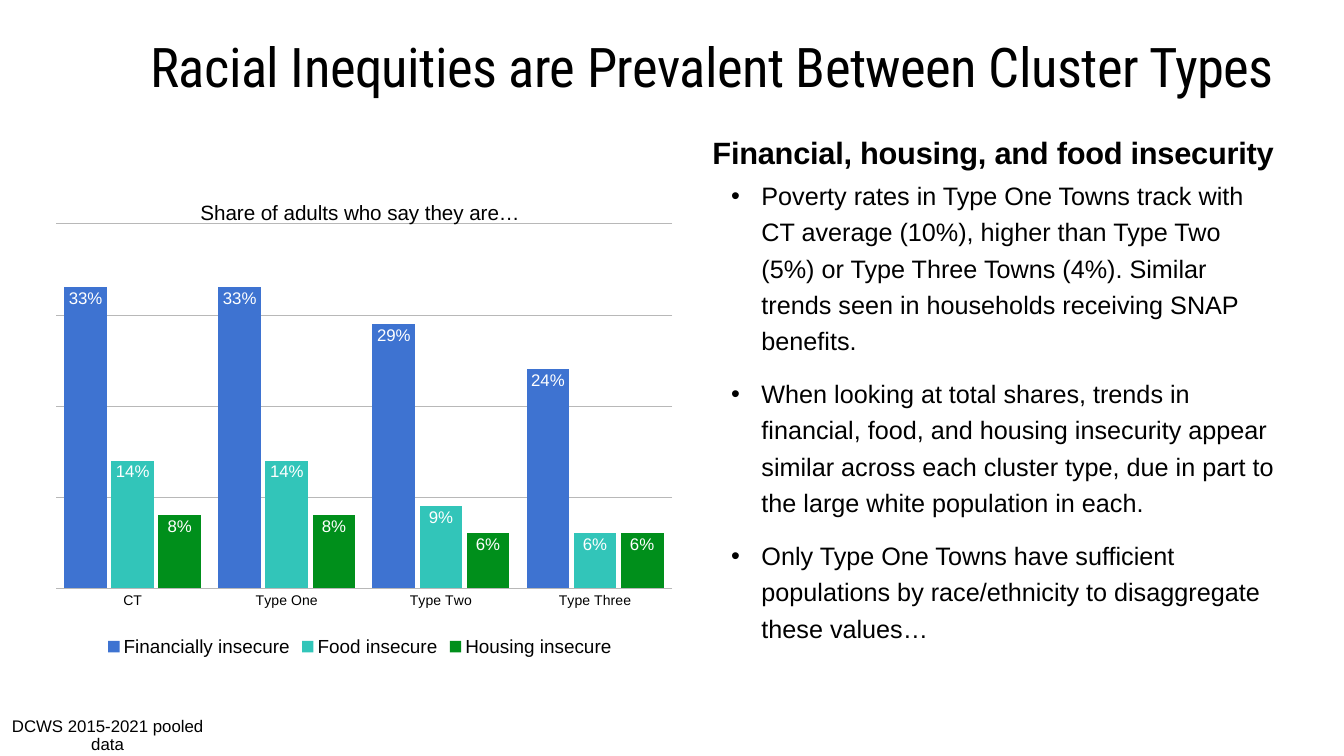
from pptx import Presentation
from pptx.chart.data import CategoryChartData
from pptx.dml.color import RGBColor
from pptx.enum.chart import (XL_CHART_TYPE, XL_LABEL_POSITION, XL_LEGEND_POSITION,
                             XL_TICK_LABEL_POSITION, XL_TICK_MARK)
from pptx.enum.text import MSO_ANCHOR, MSO_AUTO_SIZE, PP_ALIGN
from pptx.oxml import parse_xml
from pptx.oxml.ns import nsdecls
from pptx.util import Inches, Pt

# Content
TITLE = "Racial Inequities are Prevalent Between Cluster Types"
SUBTITLE = "Financial, housing, and food insecurity"
BULLETS = [
    "Poverty rates in Type One Towns track with CT average (10%), higher than Type Two (5%) "
    "or Type Three Towns (4%). Similar trends seen in households receiving SNAP benefits.",
    "When looking at total shares, trends in financial, food, and housing insecurity appear "
    "similar across each cluster type, due in part to the large white population in each.",
    "Only Type One Towns have sufficient populations by race/ethnicity to disaggregate "
    "these values…",
]
SOURCE_NOTE = "DCWS 2015-2021 pooled data"
CHART_TITLE = "Share of adults who say they are…"
TOWN_TYPES = ["CT", "Type One", "Type Two", "Type Three"]
SERIES = [
    ("Financially insecure", "3E73D1", (0.33, 0.33, 0.29, 0.24)),
    ("Food insecure", "32C5B9", (0.14, 0.14, 0.09, 0.06)),
    ("Housing insecure", "008F1B", (0.08, 0.08, 0.06, 0.06)),
]

# Layout in inches
WIDTH, HEIGHT = 26.67, 15
MARGIN = 1.33
FULL_WIDTH = WIDTH - 2 * MARGIN
INSET = 0.06
PLOT_AREA = {"x": 0.018, "y": 0.084, "w": 0.977, "h": 0.763}


def color(hex_value):
    return RGBColor.from_string(hex_value)


def style_font(font, size, hex_value="000000", name="Arial", bold=False):
    font.size, font.name, font.bold = Pt(size), name, bold
    font.color.rgb = color(hex_value)


def place(shape, left, top, width, height):
    shape.left, shape.top = Inches(left), Inches(top)
    shape.width, shape.height = Inches(width), Inches(height)


def fill_text(shape, texts, size, align, anchor=MSO_ANCHOR.TOP, line_spacing=1.0,
              space_before=0, name="Arial", bold=False, tracking=0):
    frame = shape.text_frame
    frame.word_wrap, frame.auto_size = True, MSO_AUTO_SIZE.NONE
    frame.vertical_anchor = anchor
    frame.margin_left = frame.margin_right = Inches(INSET)
    frame.margin_top = frame.margin_bottom = Inches(INSET)
    frame.text = "\n".join(texts)
    for paragraph in frame.paragraphs:
        paragraph.alignment = align
        paragraph.line_spacing = line_spacing
        paragraph.space_before = Pt(space_before)
        style_font(paragraph.font, size, name=name, bold=bold)
        if tracking:
            paragraph.runs[0].font._element.set("spc", str(round(tracking * 100)))
    return frame


def add_bullet(paragraph, indent):
    properties = paragraph._p.get_or_add_pPr()
    properties.set("marL", str(Inches(indent)))
    properties.set("indent", str(-Inches(indent)))
    bullet = parse_xml(f'<a:buChar {nsdecls("a")} char="•"/>')
    properties.insert_element_before(bullet, "a:tabLst", "a:defRPr", "a:extLst")


def set_plot_area(chart, area):
    plot_area = chart._chartSpace.chart.plotArea
    for layout in plot_area.findall("{*}layout"):
        plot_area.remove(layout)
    sizes = "".join(f'<c:{key} val="{value}"/>' for key, value in area.items())
    plot_area.insert(0, parse_xml(
        f'<c:layout {nsdecls("c")}><c:manualLayout><c:layoutTarget val="inner"/>'
        f'<c:xMode val="edge"/><c:yMode val="edge"/>{sizes}</c:manualLayout></c:layout>'))


def add_insecurity_chart(slide):
    data = CategoryChartData(number_format="General")
    data.categories = TOWN_TYPES
    for name, _, values in SERIES:
        data.add_series(name, values)
    chart = slide.shapes.add_chart(
        XL_CHART_TYPE.COLUMN_CLUSTERED, Inches(0.88), Inches(3.64),
        Inches(12.52), Inches(9.48), data).chart
    style_font(chart.font, 10, name="Calibri")

    # Title and legend
    chart.has_title = True
    chart.chart_title.include_in_layout = True
    chart.chart_title.text_frame.text = CHART_TITLE
    style_font(chart.chart_title.text_frame.paragraphs[0].font, 29.5)
    chart.has_legend = True
    chart.legend.position = XL_LEGEND_POSITION.BOTTOM
    chart.legend.include_in_layout = True
    style_font(chart.legend.font, 27)

    # Axes
    for axis in (chart.category_axis, chart.value_axis):
        axis.major_tick_mark = axis.minor_tick_mark = XL_TICK_MARK.NONE
        axis.format.line.fill.background()
        style_font(axis.tick_labels.font, 20)
    chart.category_axis.tick_label_position = XL_TICK_LABEL_POSITION.LOW
    values = chart.value_axis
    values.tick_label_position = XL_TICK_LABEL_POSITION.NONE
    values.minimum_scale, values.maximum_scale, values.major_unit = 0, 0.4, 0.1
    values.has_major_gridlines = True
    grid = values.major_gridlines.format.line
    grid.color.rgb, grid.width = color("B8B8B8"), Pt(0.5)

    # Columns and their labels
    plot = chart.plots[0]
    plot.gap_width, plot.overlap, plot.vary_by_categories = 40, -10, False
    for series, (_, fill, _) in zip(plot.series, SERIES):
        series.format.fill.solid()
        series.format.fill.fore_color.rgb = color(fill)
        labels = series.data_labels
        labels.show_value = True
        labels.position = XL_LABEL_POSITION.INSIDE_END
        labels.number_format, labels.number_format_is_linked = "#,##0%", False
        style_font(labels.font, 24, "FFFFFF")
    set_plot_area(chart, PLOT_AREA)


def main():
    presentation = Presentation()
    presentation.slide_width, presentation.slide_height = Inches(WIDTH), Inches(HEIGHT)
    slide = presentation.slides.add_slide(presentation.slide_layouts[1])
    title, body = slide.placeholders

    # Headings
    place(title, MARGIN, 0.85, FULL_WIDTH, 1.89)
    fill_text(title, [TITLE], 78.1, PP_ALIGN.RIGHT, line_spacing=0.8,
              name="Roboto Condensed", tracking=-0.8)
    subtitle = slide.shapes.add_textbox(0, 0, 0, 0)
    place(subtitle, MARGIN, 2.59, FULL_WIDTH, 0.91)
    fill_text(subtitle, [SUBTITLE], 44, PP_ALIGN.RIGHT, bold=True, tracking=-0.4)

    # Findings
    place(body, 14.45, 3.77, 10.99, 8.68)
    findings = fill_text(body, BULLETS, 36, PP_ALIGN.LEFT, MSO_ANCHOR.MIDDLE,
                         line_spacing=1.2, space_before=24)
    for paragraph in findings.paragraphs:
        add_bullet(paragraph, 0.6)

    add_insecurity_chart(slide)

    # Source note, kept to a narrow column on two lines
    note = slide.shapes.add_textbox(0, 0, 0, 0)
    place(note, 0.17, 14.35, 4.61, 0.5)
    frame = fill_text(note, [SOURCE_NOTE], 24, PP_ALIGN.CENTER, MSO_ANCHOR.MIDDLE,
                      line_spacing=0.9)
    frame.margin_right = Inches(0.74)

    presentation.save("out.pptx")


if __name__ == "__main__":
    main()
